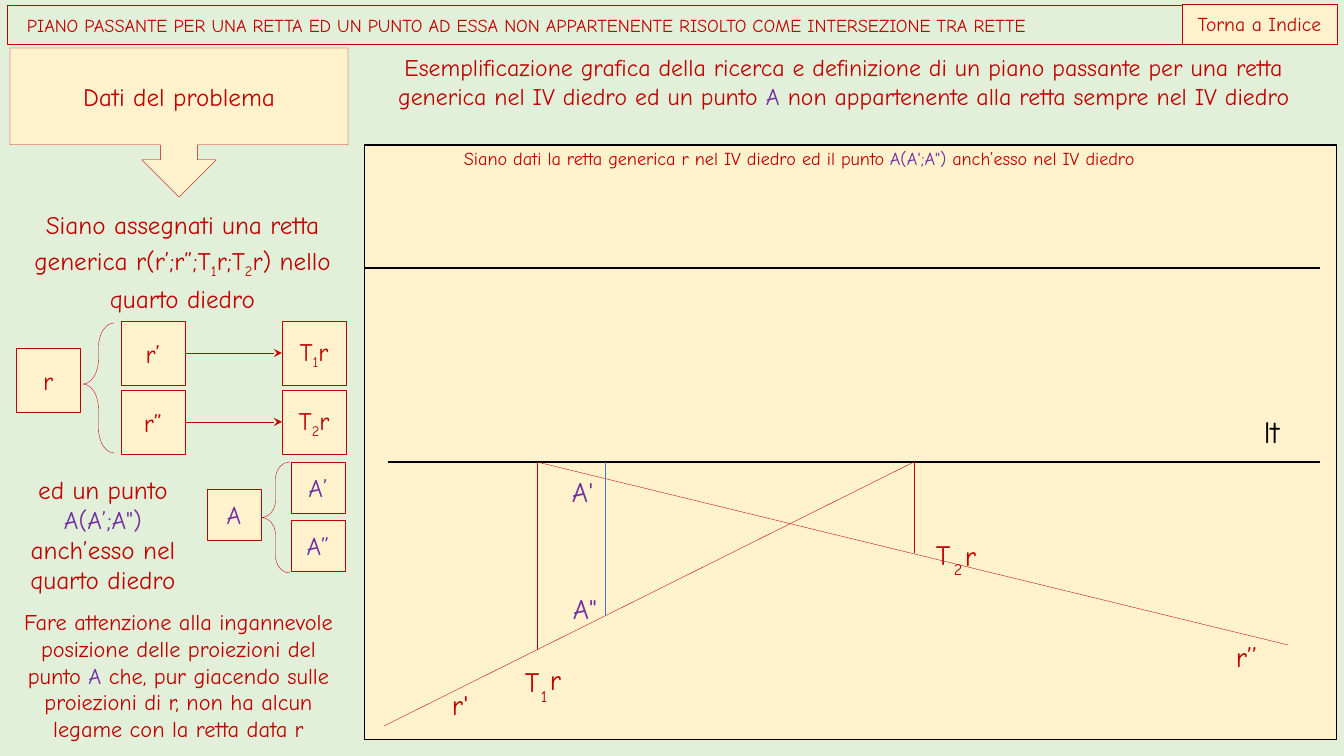
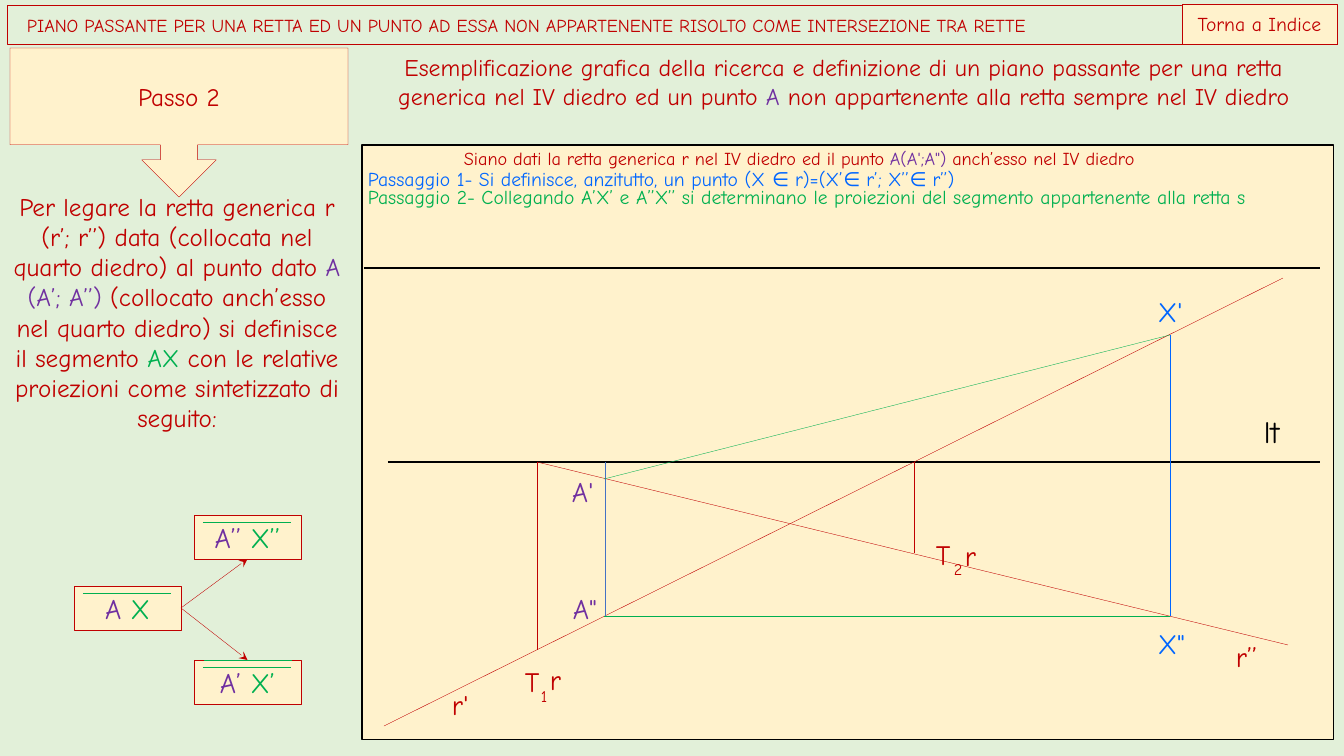
"""Build two slides on a plane through a line and a point outside it."""
from lxml import etree
from pptx import Presentation
from pptx import util as u
from pptx.dml.color import RGBColor
from pptx.enum import shapes, text
from pptx.oxml import ns

SLIDE_WIDTH, SLIDE_HEIGHT = 1344, 756
SCALE = 12192000 / SLIDE_WIDTH
FONT = "Comic Neue"
COLORS = {
    "background": "E2F0D9",
    "cream": "FFF2CC",
    "red": "C00000",
    "purple": "7030A0",
    "green": "00B050",
    "blue": "0066FF",
    "steel": "4472C4",
    "black": "000000",
}
CENTER, LEFT = text.PP_ALIGN.CENTER, text.PP_ALIGN.LEFT
TOP, SIDE_LEFT, BOTTOM, SIDE_RIGHT = range(4)
SUBSCRIPT = -25000


def px(value):
    """Turn pixels into EMU."""
    return u.Emu(round(value * SCALE))


def rgb(name):
    """Return a named colour."""
    return RGBColor.from_string(COLORS[name])


def apply(target, **values):
    """Set attributes from format values."""
    for name, value in values.items():
        setattr(target, name, value)


TIGHT = dict.fromkeys(("margin_left", "margin_top", "margin_right", "margin_bottom"), 0)
LABEL = {**TIGHT, "word_wrap": False}
TITLE = {
    "margin_left": px(20),
    "margin_top": px(9),
    "margin_bottom": px(5),
    "vertical_anchor": text.MSO_ANCHOR.MIDDLE,
}


def write(shape, runs, size, alignment=CENTER, spacing=1.0, **frame_format):
    """Fill a shape with one paragraph of coloured runs."""
    frame = shape.text_frame
    apply(frame, **{"word_wrap": True, "auto_size": text.MSO_AUTO_SIZE.NONE, **frame_format})
    paragraph = frame.paragraphs[0]
    apply(paragraph, alignment=alignment, line_spacing=spacing)
    for content, color, *baseline in runs:
        run = paragraph.add_run()
        run.text = content
        apply(run.font, name=FONT, size=u.Pt(size), bold=False)
        run.font.color.rgb = rgb(color)
        if baseline:
            run.font._element.set("baseline", str(baseline[0]))


def outline(line, color):
    """Draw a hairline in a named colour."""
    line.color.rgb = rgb(color)
    line.width = u.Pt(0 if color == "black" else 0.25)


def add_text(slide, box, runs, size, alignment=CENTER, **options):
    """Add a text box."""
    shape = slide.shapes.add_textbox(*map(px, box))
    write(shape, runs, size, alignment, **options)
    return shape


def add_label(slide, x, y, content, color, size=20, *baseline):
    """Add a short unwrapped label."""
    add_text(slide, (x, y, 32, 34), [(content, color, *baseline)], size, LEFT, **LABEL)


def add_box(slide, box, runs=(), size=18, line="red", kind=shapes.MSO_SHAPE.RECTANGLE):
    """Add a cream shape with centred text."""
    shape = slide.shapes.add_shape(kind, *map(px, box))
    shape.shadow.inherit = False
    shape.fill.solid()
    shape.fill.fore_color.rgb = rgb("cream")
    outline(shape.line, line)
    if runs:
        write(shape, runs, size, vertical_anchor=text.MSO_ANCHOR.MIDDLE)
    return shape


def add_brace(slide, box, curve, middle):
    """Add a left brace."""
    brace = slide.shapes.add_shape(shapes.MSO_SHAPE.LEFT_BRACE, *map(px, box))
    brace.shadow.inherit = False
    brace.fill.background()
    outline(brace.line, "red")
    brace.adjustments[0] = curve
    brace.adjustments[1] = middle


def add_line(slide, points, color="red"):
    """Add a straight line given as x1, y1, x2, y2."""
    connector = slide.shapes.add_connector(shapes.MSO_CONNECTOR.STRAIGHT, *map(px, points))
    outline(connector.line, color)
    etree.SubElement(connector._element.spPr, ns.qn("a:effectLst"))
    return connector


def add_arrow(slide, start, start_side, end, end_side):
    """Join two boxes with a stealth arrow."""
    arrow = add_line(slide, (0, 0, 1, 1))
    arrow.begin_connect(start, start_side)
    arrow.end_connect(end, end_side)
    etree.SubElement(arrow.line._get_or_add_ln(), ns.qn("a:tailEnd"), type="stealth")


def add_frame(presentation, step):
    """Add a slide with title band, index button, step callout and heading."""
    slide = presentation.slides.add_slide(presentation.slide_layouts[5])
    title = slide.shapes.title
    apply(title, left=px(7), top=px(5), width=px(1330), height=px(39))
    outline(title.line, "red")
    write(title, [("PIANO PASSANTE PER UNA RETTA ED UN PUNTO AD ESSA NON APPARTENENTE "
                   "RISOLTO COME INTERSEZIONE TRA RETTE", "red")], 13, LEFT, 0.9, **TITLE)
    add_box(slide, (1182, 4, 155, 40), [("Torna a Indice", "red")], 14)
    add_box(slide, (10, 48, 338, 149), [(step, "red")],
            kind=shapes.MSO_SHAPE.DOWN_ARROW_CALLOUT)
    add_text(slide, (348, 48, 992, 68), [
        ("Esemplificazione grafica della ricerca e definizione di un piano passante per una "
         "retta generica nel IV diedro ed un punto ", "red"),
        ("A", "purple"),
        (" non appartenente alla retta sempre nel IV diedro", "red")], 17)
    return slide


def add_diagram(slide, left):
    """Draw the panel with the line r and the point A."""
    add_box(slide, (left, 145, 972, 595), line="black")
    add_label(slide, 1264, 413, "lt", "black", 22)
    for x, y, content, color in (
        (572, 474, "A'", "purple"),
        (573, 591, 'A"', "purple"),
        (452, 687, "r'", "red"),
        (1236, 639, "r’’", "red"),
        (936, 537, "T", "red"),
        (965, 538, "r", "red"),
        (525, 664, "T", "red"),
        (550, 662, "r", "red"),
    ):
        add_label(slide, x, y, content, color)
    for x, y, digit in ((954, 540, "2"), (541, 667, "1")):
        add_label(slide, x, y, digit, "red", 20, SUBSCRIPT)
    for *points, color in (
        (364, 268, 1320, 268, "black"),
        (388, 462, 1320, 462, "black"),
        (384, 726, 914, 462, "red"),
        (537, 462, 1288, 645, "red"),
        (537, 462, 537, 650, "red"),
        (914, 462, 914, 553, "red"),
        (605, 462, 605, 616, "steel"),
    ):
        add_line(slide, points, color)
    add_text(slide, (464, 147, 752, 22), [
        ("Siano dati la retta generica r nel IV diedro ed il punto ", "red"),
        ("A(A';A\") ", "purple"),
        ("anch’esso nel IV diedro", "red")], 13, LEFT, **TIGHT)


def add_line_scheme(slide):
    """Show the line r with its projections and traces."""
    add_box(slide, (16, 348, 64, 64), [("r", "red")])
    add_brace(slide, (83, 323, 31, 130), 0.8, 0.47)
    for row, (projection, trace) in enumerate((("r’", "1"), ("r”", "2"))):
        y = 321 + 69 * row
        source = add_box(slide, (121, y, 64, 64), [(projection, "red")])
        target = add_box(slide, (282, y, 64, 64),
                         [("T", "red"), (trace, "red", SUBSCRIPT), ("r", "red")])
        add_arrow(slide, source, SIDE_RIGHT, target, SIDE_LEFT)


def add_point_scheme(slide):
    """Show the point A with its projections."""
    add_brace(slide, (261, 462, 29, 111), 0.58, 0.5)
    for x, y, name in ((207, 489, "A"), (291, 462, "A’"), (291, 520, "A”")):
        add_box(slide, (x, y, 54, 51), [(name, "purple")])


def add_segment(slide, x, y, mark=""):
    """Add a box naming the segment AX under an overline."""
    box = add_box(slide, (x, y, 107, 44),
                  [(f"A{mark} ", "purple"), (f"X{mark}", "green")], 20)
    add_line(slide, (x + 9, y + 7, x + 97, y + 7), "green")
    return box


def build_data_slide(presentation):
    """Build the slide with the data of the problem."""
    slide = add_frame(presentation, "Dati del problema")
    add_diagram(slide, 365)
    add_text(slide, (10, 200, 345, 113), [
        ("Siano assegnati una retta generica r(r’;r”;T", "red"),
        ("1", "red", SUBSCRIPT),
        ("r;T", "red"),
        ("2", "red", SUBSCRIPT),
        ("r) nello quarto diedro", "red")], 18, spacing=1.15)
    add_line_scheme(slide)
    add_text(slide, (7, 469, 192, 132), [
        ("ed un punto ", "red"),
        ("A(A’;A\") ", "purple"),
        ("anch’esso nel quarto diedro", "red")], 18)
    add_point_scheme(slide)
    add_text(slide, (1, 603, 355, 146), [
        ("Fare attenzione alla ingannevole posizione delle proiezioni del punto ", "red"),
        ("A ", "purple"),
        ("che, pur giacendo sulle proiezioni di r, non ha alcun legame con la retta data r",
         "red")], 16)


def build_step_slide(presentation):
    """Build the slide that joins A and X."""
    slide = add_frame(presentation, "Passo 2")
    add_text(slide, (0, 186, 354, 285), [
        ("Per legare la retta generica r (r’; r’’) data (collocata nel quarto diedro) "
         "al punto dato ", "red"),
        ("A (A’; A’’) ", "purple"),
        ("(collocato anch’esso nel quarto diedro) si definisce il segmento ", "red"),
        ("AX", "green"),
        (" con le relative proiezioni come sintetizzato di seguito:", "red")], 18)
    segment = add_segment(slide, 74, 586)
    add_arrow(slide, segment, SIDE_RIGHT, add_segment(slide, 194, 515, "’’"), BOTTOM)
    add_arrow(slide, segment, SIDE_RIGHT, add_segment(slide, 194, 660, "’"), TOP)
    add_line(slide, (204, 660, 292, 660), "green")
    add_diagram(slide, 362)
    add_label(slide, 1158, 294, "X'", "blue")
    add_label(slide, 1158, 626, 'X"', "blue")
    add_line(slide, (914, 462, 1283, 278))
    add_line(slide, (1170, 335, 1170, 616), "blue")
    add_line(slide, (604, 616, 1170, 616), "green")
    add_line(slide, (604, 479, 1170, 335), "green")
    add_text(slide, (358, 162, 655, 34), [
        ("Passaggio 1- Si definisce, anzitutto, un punto (X ∈ r)=(X’∈ r’; X’’∈ r’’)",
         "blue")], 14, LEFT)
    add_text(slide, (358, 180, 964, 34), [
        ("Passaggio 2- Collegando A’X’ e A’’X’’ si determinano le proiezioni del segmento "
         "appartenente alla retta s", "green")], 14, LEFT)


def main():
    """Build and save the presentation."""
    presentation = Presentation()
    apply(presentation, slide_width=px(SLIDE_WIDTH), slide_height=px(SLIDE_HEIGHT))
    background = presentation.slide_master.background.fill
    background.solid()
    background.fore_color.rgb = rgb("background")
    build_data_slide(presentation)
    build_step_slide(presentation)
    presentation.save("out.pptx")


if __name__ == "__main__":
    main()
